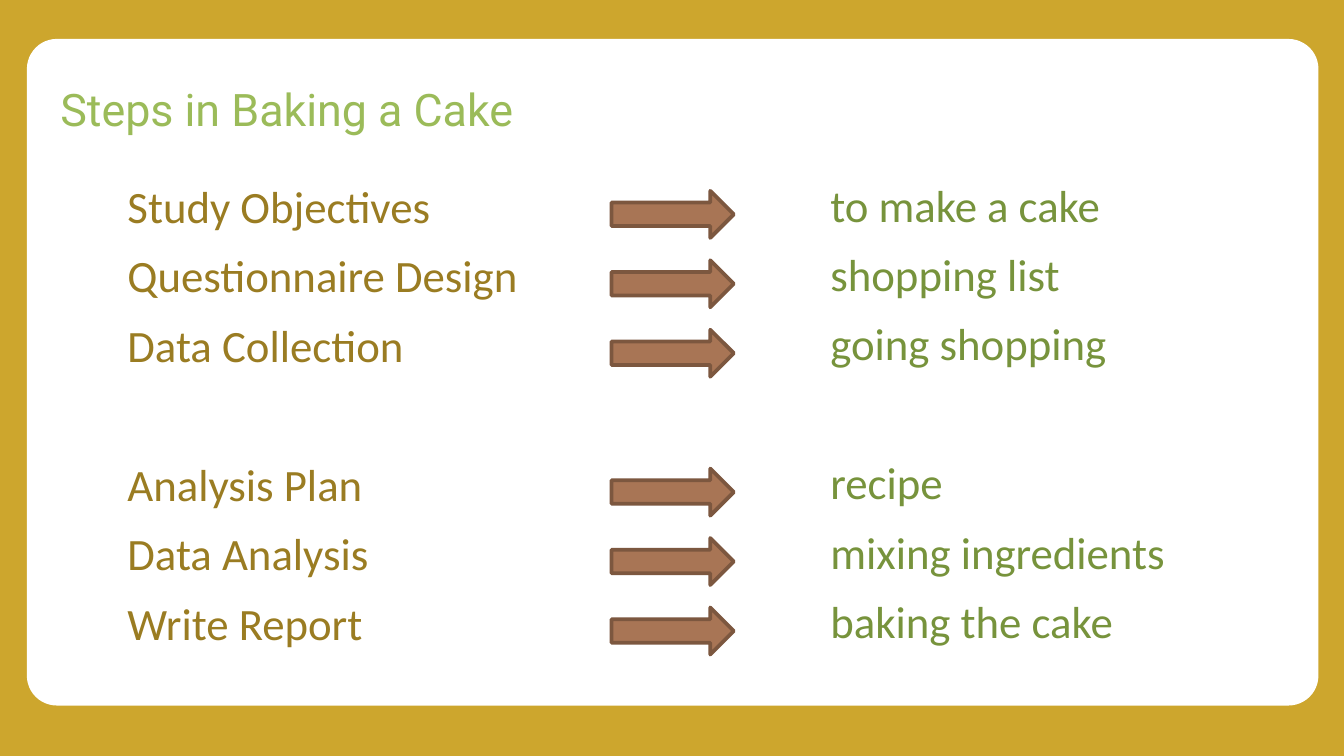
from dataclasses import dataclass

from pptx import Presentation
from pptx.dml.color import RGBColor
from pptx.enum.shapes import MSO_SHAPE
from pptx.enum.text import MSO_ANCHOR, MSO_AUTO_SIZE
from pptx.slide import Slide
from pptx.util import Inches, Pt

ROUND = MSO_SHAPE.ROUNDED_RECTANGLE
ARROW = MSO_SHAPE.RIGHT_ARROW
MIDDLE = MSO_ANCHOR.MIDDLE
GROW = MSO_AUTO_SIZE.SHAPE_TO_FIT_TEXT

COLORS = {
    "gold": "CDA62D",
    "white": "FFFFFF",
    "title": "9BBB59",
    "step": "9A7C22",
    "cake": "77933C",
    "arrow": "A87555",
    "edge": "7C573F",
}
WIDE = 10
HIGH = WIDE * 9 / 16
TOP, PITCH = 1.28, 3.1 / 6
STEP_X, ARROW_X, CAKE_X = 0.85, 4.55, 6.08


@dataclass
class Label:
    text: str
    width: float


@dataclass
class Pair:
    row: int
    step: Label
    cake: Label


# Row 3 is left open between the two groups
PAIRS = [
    Pair(0, Label("Study Objectives", 2.48), Label("to make a cake", 2.23)),
    Pair(1, Label("Questionnaire Design", 3.14), Label("shopping list", 1.92)),
    Pair(2, Label("Data Collection", 2.28), Label("going shopping", 2.27)),
    Pair(4, Label("Analysis Plan", 1.97), Label("recipe", 1.05)),
    Pair(5, Label("Data Analysis", 2.01), Label("mixing ingredients", 2.71)),
    Pair(6, Label("Write Report", 1.97), Label("baking the cake", 2.32)),
]


def rgb(name: str) -> RGBColor:
    return RGBColor.from_string(COLORS[name])


def add_text(slide: Slide, label: Label, x: float, y: float, color: str,
             height: float = 0.5, font: str = "Calibri"):
    box = slide.shapes.add_textbox(
        Inches(x), Inches(y), Inches(label.width), Inches(height))
    frame = box.text_frame
    frame.word_wrap = False
    run = frame.paragraphs[0].add_run()
    run.text = label.text
    run.font.size = Pt(24)
    run.font.name = font
    run.font.color.rgb = rgb(color)
    return frame


def add_form(slide: Slide, kind: MSO_SHAPE, x: float, y: float,
             width: float, height: float, fill: str):
    form = slide.shapes.add_shape(
        kind, Inches(x), Inches(y), Inches(width), Inches(height))
    form.shadow.inherit = False
    form.fill.solid()
    form.fill.fore_color.rgb = rgb(fill)
    form.line.fill.background()
    return form


def add_pair(slide: Slide, pair: Pair) -> None:
    y = TOP + pair.row * PITCH
    add_text(slide, pair.step, STEP_X, y, "step").auto_size = GROW
    add_text(slide, pair.cake, CAKE_X, y - 0.01, "cake").auto_size = GROW
    arrow = add_form(slide, ARROW, ARROW_X, y + 0.14, 0.91, 0.35, "arrow")
    arrow.line.color.rgb = rgb("edge")
    arrow.line.width = Pt(2)


def main() -> None:
    deck = Presentation()
    deck.slide_width, deck.slide_height = Inches(WIDE), Inches(HIGH)
    slide = deck.slides.add_slide(deck.slide_layouts[6])

    # Background and card
    slide.background.fill.solid()
    slide.background.fill.fore_color.rgb = rgb("gold")
    card = add_form(slide, ROUND, 0.2, 0.29, 9.61, 4.96, "white")
    card.adjustments[0] = 0.045

    # Title
    title = add_text(slide, Label("Steps in Baking a Cake", 9.15),
                     0.35, 0.45, "title", 0.71, "Roboto")
    title.word_wrap = True
    title.vertical_anchor = MIDDLE

    # Study steps matched with cake steps
    for pair in PAIRS:
        add_pair(slide, pair)

    deck.save("out.pptx")


if __name__ == "__main__":
    main()
